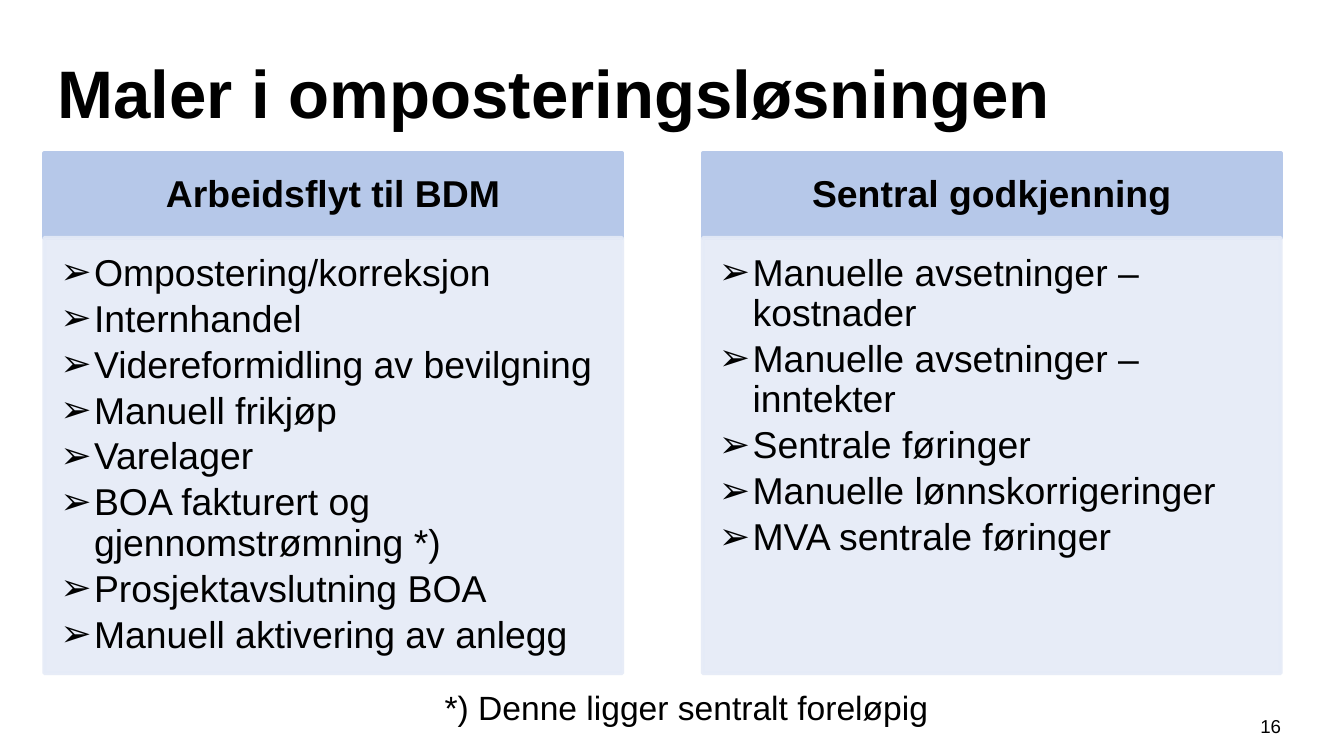
from dataclasses import dataclass

from lxml import etree
from pptx import Presentation
from pptx.dml.color import RGBColor
from pptx.enum.shapes import MSO_SHAPE
from pptx.enum.text import MSO_ANCHOR, PP_ALIGN
from pptx.oxml.ns import qn
from pptx.util import Inches, Pt

RECTANGLE = MSO_SHAPE.RECTANGLE
TOP, MIDDLE = MSO_ANCHOR.TOP, MSO_ANCHOR.MIDDLE
LEFT, CENTER = PP_ALIGN.LEFT, PP_ALIGN.CENTER

FONT = "Arial"
BLACK, HEADER_BLUE, PALE_BLUE = "000000", "B6C8E9", "E5EBF7"
SLIDE_WIDTH = 10
SLIDE_HEIGHT = SLIDE_WIDTH * 9 / 16
COLUMN_LEFT, COLUMN_STEP, COLUMN_WIDTH = 0.33, 4.9, 4.3
HEADER_TOP, HEADER_HEIGHT, LIST_HEIGHT = 1.14, 0.63, 3.24


@dataclass(frozen=True)
class Box:
    left: float
    top: float
    width: float
    height: float


@dataclass(frozen=True)
class TextFormat:
    size: float
    bold: bool = False
    align: PP_ALIGN = LEFT
    anchor: MSO_ANCHOR = TOP
    insets: tuple[float, float, float, float] = (0.1, 0.05, 0.1, 0.05)
    line_spacing: float = 1.0
    space_after: float = 0
    bullet: str = ""


@dataclass(frozen=True)
class TemplateColumn:
    heading: str
    templates: list[str]


TITLE_FORMAT = TextFormat(36, bold=True, anchor=MIDDLE)
NUMBER_FORMAT = TextFormat(10, align=CENTER, insets=(0, 0.05, 0, 0.05))
NOTE_FORMAT = TextFormat(18)
HEADER_FORMAT = TextFormat(20, True, CENTER, MIDDLE, (0.16, 0.09, 0.16, 0.09), 0.9)
LIST_FORMAT = TextFormat(20, insets=(0.12, 0.12, 0.16, 0.17), line_spacing=0.9,
                         space_after=3, bullet="➢")

COLUMNS = [
    TemplateColumn("Arbeidsflyt til BDM", [
        "Ompostering/korreksjon",
        "Internhandel",
        "Videreformidling av bevilgning",
        "Manuell frikjøp",
        "Varelager",
        "BOA fakturert og gjennomstrømning *)",
        "Prosjektavslutning BOA",
        "Manuell aktivering av anlegg",
    ]),
    TemplateColumn("Sentral godkjenning", [
        "Manuelle avsetninger – kostnader",
        "Manuelle avsetninger – inntekter",
        "Sentrale føringer",
        "Manuelle lønnskorrigeringer",
        "MVA sentrale føringer",
    ]),
]


def color(value: str) -> RGBColor:
    """Turn a hex string into a colour."""
    return RGBColor.from_string(value)


def place(box: Box) -> list[int]:
    """Give the lengths of a box in the order the shape methods take them."""
    return [Inches(length) for length in (box.left, box.top, box.width, box.height)]


def add_bullet(paragraph, character: str) -> None:
    """Give a paragraph a hanging bullet."""
    properties = paragraph._p.get_or_add_pPr()
    properties.set("marL", str(Inches(0.25)))
    properties.set("indent", str(-Inches(0.25)))
    etree.SubElement(properties, qn("a:buFont")).set("typeface", FONT)
    etree.SubElement(properties, qn("a:buChar")).set("char", character)


def write(frame, lines: list[str], style: TextFormat) -> None:
    """Fill a text frame with one paragraph per line."""
    sides = ("margin_left", "margin_top", "margin_right", "margin_bottom")
    settings = {"word_wrap": True, "vertical_anchor": style.anchor}
    settings.update(zip(sides, map(Inches, style.insets)))
    for name, value in settings.items():
        setattr(frame, name, value)
    for index, line in enumerate(lines):
        paragraph = frame.add_paragraph() if index else frame.paragraphs[0]
        if style.bullet:
            add_bullet(paragraph, style.bullet)
        spacing = {"alignment": style.align, "line_spacing": style.line_spacing,
                   "space_after": Pt(style.space_after)}
        for name, value in spacing.items():
            setattr(paragraph, name, value)
        run = paragraph.add_run()
        run.text = line
        for name, value in {"name": FONT, "size": Pt(style.size), "bold": style.bold}.items():
            setattr(run.font, name, value)
        run.font.color.rgb = color(BLACK)


def add_label(slide, box: Box, text: str, style: TextFormat) -> None:
    """Add a text box with a single line."""
    write(slide.shapes.add_textbox(*place(box)).text_frame, [text], style)


def add_panel(slide, box: Box, tint: str, opacity: int, lines: list[str],
              style: TextFormat) -> None:
    """Add a filled rectangle that holds text."""
    panel = slide.shapes.add_shape(RECTANGLE, *place(box))
    panel.shadow.inherit = False
    panel.line.width = Pt(2)
    for paint in (panel.fill, panel.line.fill):
        paint.solid()
        paint.fore_color.rgb = color(tint)
    if opacity < 100:
        for swatch in panel._element.spPr.iter(qn("a:srgbClr")):
            etree.SubElement(swatch, qn("a:alpha")).set("val", str(opacity * 1000))
    write(panel.text_frame, lines, style)


def add_column(slide, left: float, column: TemplateColumn) -> None:
    """Add a heading with its list of templates below."""
    header = Box(left, HEADER_TOP, COLUMN_WIDTH, HEADER_HEIGHT)
    listing = Box(left, HEADER_TOP + HEADER_HEIGHT, COLUMN_WIDTH, LIST_HEIGHT)
    add_panel(slide, header, HEADER_BLUE, 100, [column.heading], HEADER_FORMAT)
    add_panel(slide, listing, PALE_BLUE, 90, column.templates, LIST_FORMAT)


def main() -> None:
    """Build the slide and save it."""
    deck = Presentation()
    deck.slide_width, deck.slide_height = Inches(SLIDE_WIDTH), Inches(SLIDE_HEIGHT)
    slide = deck.slides.add_slide(deck.slide_layouts[6])
    add_label(slide, Box(9.27, 5.27, 0.37, 0.3), "16", NUMBER_FORMAT)
    add_label(slide, Box(0.33, 0.33, 9.21, 0.71), "Maler i omposteringsløsningen", TITLE_FORMAT)
    for index, column in enumerate(COLUMNS):
        add_column(slide, COLUMN_LEFT + index * COLUMN_STEP, column)
    add_label(slide, Box(3.21, 5.06, 5.01, 0.4), "*) Denne ligger sentralt foreløpig", NOTE_FORMAT)
    deck.save("out.pptx")


if __name__ == "__main__":
    main()
